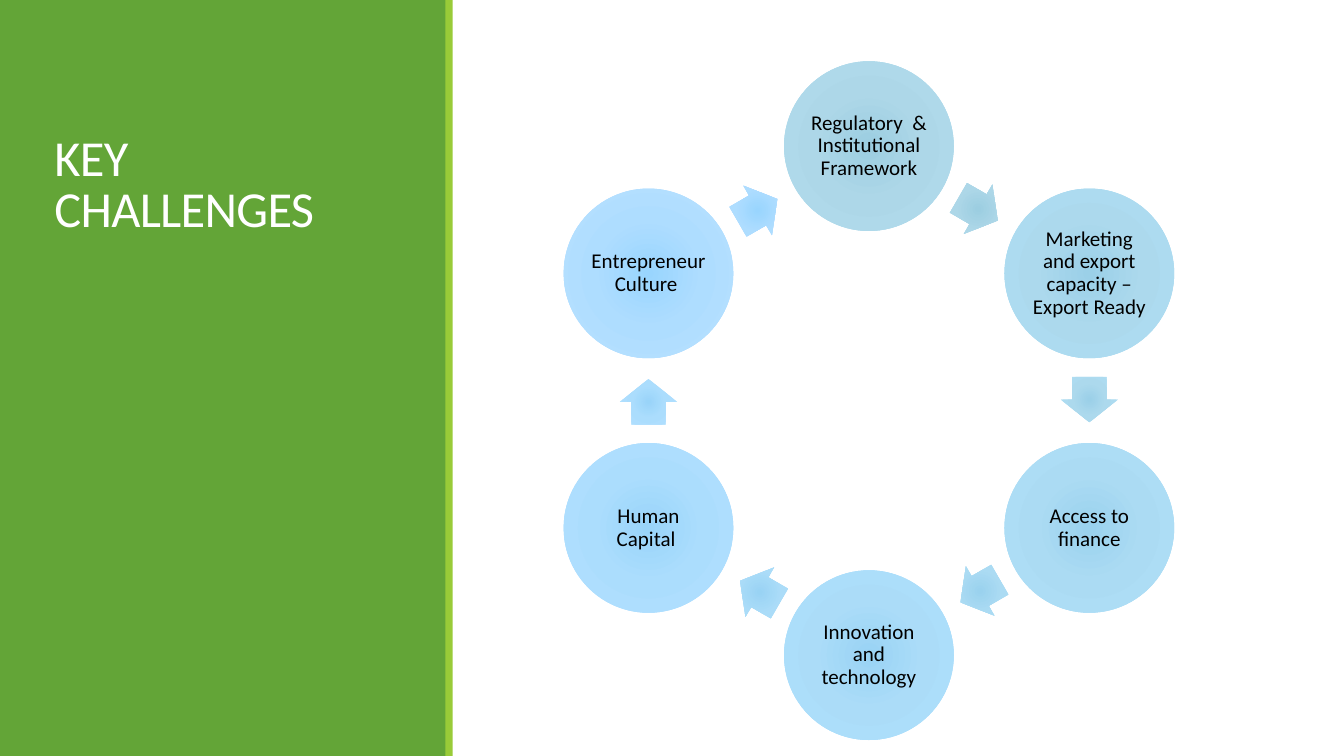
import math
from dataclasses import dataclass

import pptx
import pptx.dml.color
import pptx.enum.shapes
import pptx.enum.text
import pptx.oxml
import pptx.oxml.ns
import pptx.shapes.autoshape
import pptx.slide
import pptx.text.text
import pptx.util

SLIDE_WIDTH = pptx.util.Inches(13.33)
SLIDE_HEIGHT = pptx.util.Inches(7.5)
COLUMN = SLIDE_WIDTH / 160
ROW = SLIDE_HEIGHT / 90

FONT = "Calibri"
COLOURS = {
    "panel": "63A537",
    "stripe": "99CB38",
    "title": "FFFFFF",
    "label": "000000",
}

# The ring of challenges, in grid columns and rows
RING_X, RING_Y, RING_RADIUS = 103.44, 47.7, 30.3
CIRCLE_SIZE = 20.2
ARROW_LENGTH, ARROW_BREADTH = 5.4, 6.8
ARROW_SETBACK = 0.14

SHAPES = pptx.enum.shapes.MSO_SHAPE


@dataclass(frozen=True)
class Area:
    left: float
    top: float
    width: float
    height: float

    def lengths(self) -> tuple[int, int, int, int]:
        return (round(self.left * COLUMN), round(self.top * ROW),
                round(self.width * COLUMN), round(self.height * ROW))


@dataclass(frozen=True)
class Challenge:
    label: str
    inner: str
    middle: str
    outer: str


CHALLENGES = [
    Challenge("Regulatory  & Institutional Framework", "9CCEE1", "ADD7E8", "B2DDEF"),
    Challenge("Marketing and export capacity – Export Ready", "9BD0E8", "ACD9ED", "B0DFF5"),
    Challenge("Access to finance", "9AD2EE", "ABDBF3", "B0E0FA"),
    Challenge("Innovation and technology", "99D3F4", "ABDCF8", "AFE1FF"),
    Challenge("Human Capital ", "99D4F9", "ABDDFD", "B3E1FF"),
    Challenge("Entrepreneur Culture ", "99D5FE", "AEDDFF", "B8E1FF"),
]


def centred(x: float, y: float, width: float, height: float) -> Area:
    return Area(x - width / 2, y - height / 2, width, height)


def add_plain_shape(page: pptx.slide.Slide, kind: SHAPES,
                    area: Area) -> pptx.shapes.autoshape.Shape:
    """Add a shape with neither outline nor shadow."""
    shape = page.shapes.add_shape(kind, *area.lengths())
    shape.shadow.inherit = False
    shape.line.fill.background()
    return shape


def fill_radial(shape: pptx.shapes.autoshape.Shape, challenge: Challenge) -> None:
    shape.fill.gradient()
    gradient = shape.element.spPr.find(pptx.oxml.ns.qn("a:gradFill"))
    for child in list(gradient):
        gradient.remove(child)
    stops = zip((0, 45000, 100000), (challenge.inner, challenge.middle, challenge.outer))
    stop_xml = "".join(f'<a:gs pos="{place}"><a:srgbClr val="{colour}"/></a:gs>'
                       for place, colour in stops)
    namespace = pptx.oxml.ns.nsdecls("a")
    gradient.append(pptx.oxml.parse_xml(f"<a:gsLst {namespace}>{stop_xml}</a:gsLst>"))
    gradient.append(pptx.oxml.parse_xml(
        f'<a:path {namespace} path="circle">'
        '<a:fillToRect l="100000" t="100000" r="100000" b="100000"/></a:path>'))


def write(frame: pptx.text.text.TextFrame, text: str, size: float, colour: str,
          alignment: pptx.enum.text.PP_ALIGN, line_spacing: float) -> None:
    frame.text = text
    frame.word_wrap = True
    frame.auto_size = pptx.enum.text.MSO_AUTO_SIZE.NONE
    frame.vertical_anchor = pptx.enum.text.MSO_ANCHOR.MIDDLE
    para = frame.paragraphs[0]
    para.alignment = alignment
    para.line_spacing = line_spacing
    span = para.runs[0]
    span.font.name = FONT
    span.font.size = pptx.util.Pt(size)
    span.font.color.rgb = pptx.dml.color.RGBColor.from_string(colour)


def add_side_panel(page: pptx.slide.Slide) -> None:
    bands = {"panel": Area(0, 0, 53.16, 90), "stripe": Area(53.04, 0, 0.84, 90)}
    for name, area in bands.items():
        band = add_plain_shape(page, SHAPES.RECTANGLE, area)
        band.fill.solid()
        band.fill.fore_color.rgb = pptx.dml.color.RGBColor.from_string(COLOURS[name])


def place_title(page: pptx.slide.Slide) -> None:
    """Fill the title placeholder and bring it in front of the panel."""
    title = page.shapes.title
    title.left, title.top, title.width, title.height = Area(5.28, 7.2, 42, 30).lengths()
    write(title.text_frame, "KEY CHALLENGES", 36, COLOURS["title"],
          pptx.enum.text.PP_ALIGN.LEFT, 0.85)
    title.text_frame.paragraphs[0].runs[0].font._element.set("spc", "-50")
    title.element.getparent().append(title.element)


def add_circle(page: pptx.slide.Slide, challenge: Challenge, angle: float) -> None:
    x = RING_X + RING_RADIUS * math.cos(math.radians(angle))
    y = RING_Y + RING_RADIUS * math.sin(math.radians(angle))
    circle = add_plain_shape(page, SHAPES.OVAL, centred(x, y, CIRCLE_SIZE, CIRCLE_SIZE))
    fill_radial(circle, challenge)
    frame = circle.text_frame
    frame.margin_left = frame.margin_right = pptx.util.Inches(0.02)
    frame.margin_top = frame.margin_bottom = pptx.util.Inches(0.02)
    write(frame, challenge.label, 15, COLOURS["label"],
          pptx.enum.text.PP_ALIGN.CENTER, 0.9)


def add_arrow(page: pptx.slide.Slide, challenge: Challenge, angle: float,
              step: float) -> None:
    """Point from the circle at this angle to the next one on the ring."""
    middle = math.radians(angle + step / 2)
    distance = RING_RADIUS * math.cos(math.radians(step / 2))
    heading = angle + step / 2 + 90
    x = RING_X + distance * math.cos(middle) - ARROW_SETBACK * math.cos(math.radians(heading))
    y = RING_Y + distance * math.sin(middle) - ARROW_SETBACK * math.sin(math.radians(heading))
    arrow = add_plain_shape(page, SHAPES.RIGHT_ARROW,
                            centred(x, y, ARROW_LENGTH, ARROW_BREADTH))
    arrow.adjustments[0] = 0.6
    arrow.adjustments[1] = 0.5
    arrow.rotation = heading
    fill_radial(arrow, challenge)


def main() -> None:
    deck = pptx.Presentation()
    deck.slide_width = SLIDE_WIDTH
    deck.slide_height = SLIDE_HEIGHT
    page = deck.slides.add_slide(deck.slide_layouts.get_by_name("Title Only"))
    add_side_panel(page)
    place_title(page)
    step = 360 / len(CHALLENGES)
    for index, challenge in enumerate(CHALLENGES):
        angle = index * step - 90
        add_circle(page, challenge, angle)
        add_arrow(page, challenge, angle, step)
    deck.save("out.pptx")


if __name__ == "__main__":
    main()
